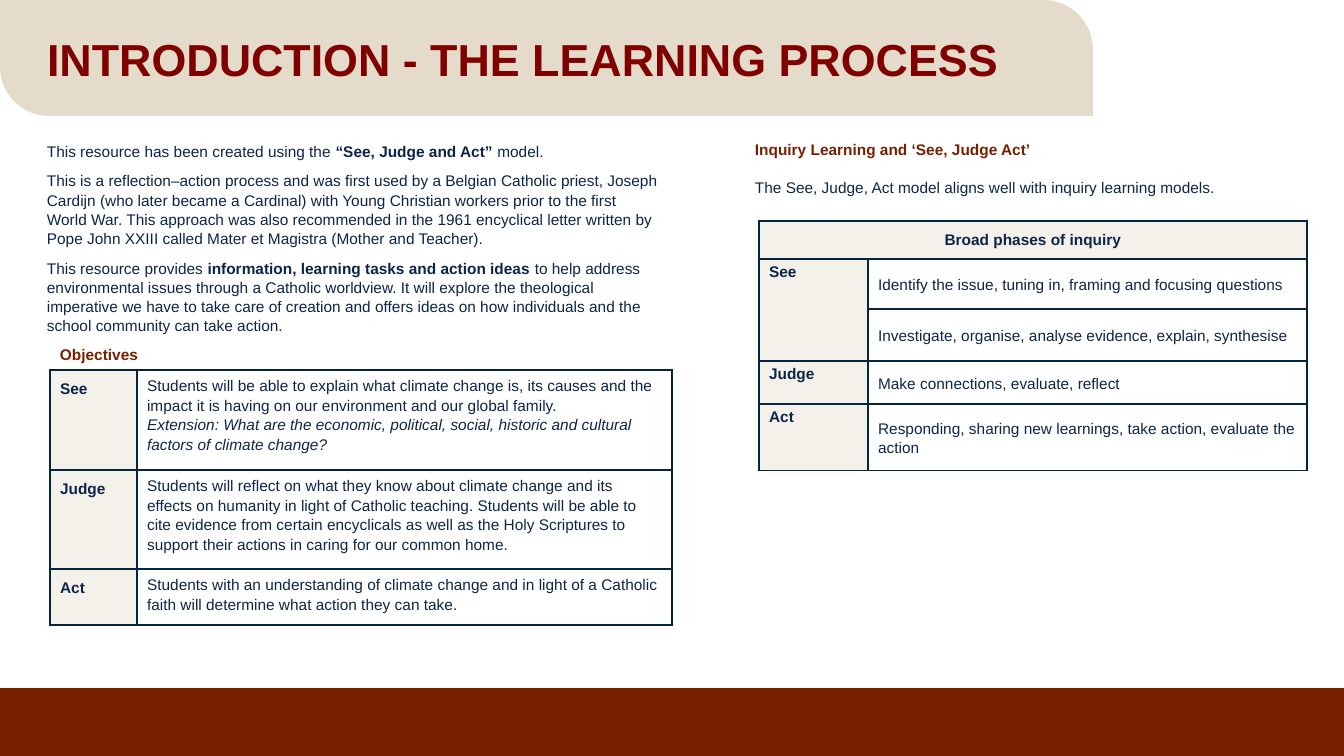
from lxml import etree
from pptx import Presentation
from pptx import util as u
from pptx.dml.color import RGBColor
from pptx.enum import shapes, text
from pptx.oxml.ns import qn

PX = 914400 / 100.8
WHITE = RGBColor(0xFF, 0xFF, 0xFF)
SAND = RGBColor(0xE5, 0xDB, 0xCB)
RUST = RGBColor(0x76, 0x20, 0x00)
MAROON = RGBColor(0x80, 0x00, 0x00)
NAVY = RGBColor(0x0C, 0x24, 0x4C)
INK = RGBColor(0x0D, 0x25, 0x4A)
BORDER = RGBColor(0x05, 0x24, 0x3F)

INTRO = [
    [("This resource has been created using the ", False),
     ("“See, Judge and Act” ", True), ("model.", False)],
    [("This is a reflection–action process and was first used by a Belgian Catholic priest, "
      "Joseph Cardijn (who later became a Cardinal) with Young Christian workers prior to the "
      "first World War. This approach was also recommended in the 1961 encyclical letter written "
      "by Pope John XXIII called Mater et Magistra (Mother and Teacher).", False)],
    [("This resource provides ", False),
     ("information, learning tasks and action ideas ", True),
     ("to help address environmental issues through a Catholic worldview. It will explore the "
      "theological imperative we have to take care of creation and offers ideas on how individuals "
      "and the school community can take action.", False)],
]
OBJECTIVES = [
    ("See", ["Students will be able to explain what climate change is, its causes and the impact "
             "it is having on our environment and our global family.",
             "Extension: What are the economic, political, social, historic and cultural factors "
             "of climate change?"]),
    ("Judge", ["Students will reflect on what they know about climate change and its effects on "
               "humanity in light of Catholic teaching. Students will be able to cite evidence from "
               "certain encyclicals as well as the Holy Scriptures to support their actions in "
               "caring for our common home."]),
    ("Act", ["Students with an understanding of climate change and in light of a Catholic faith "
             "will determine what action they can take."]),
]
PHASES = [
    ("See", "Identify the issue, tuning in, framing and focusing questions"),
    ("", "Investigate, organise, analyse evidence, explain, synthesise"),
    ("Judge", "Make connections, evaluate, reflect"),
    ("Act", "Responding, sharing new learnings, take action, evaluate the action"),
]


def px(*lengths):
    return [u.Emu(round(length * PX)) for length in lengths]


def style(paragraph, color, bold=None, size=11, spacing=None):
    font = paragraph.font
    font.name, font.size, font.bold = "Arial", u.Pt(size), bold
    font.color.rgb = color
    if spacing:
        paragraph.line_spacing = spacing


def add_band(slide, preset, box, color):
    band = slide.shapes.add_shape(preset, *px(*box))
    band.shadow.inherit = False
    band.fill.solid()
    band.fill.fore_color.rgb = color
    band.line.fill.background()
    return band


def add_copy(slide, box):
    frame = slide.shapes.add_textbox(*px(*box)).text_frame
    frame.word_wrap = True
    return frame


def draw_border(cell):
    properties = cell._tc.get_or_add_tcPr()
    for side in ("lnL", "lnR", "lnT", "lnB"):
        line = etree.SubElement(properties, qn(f"a:{side}"), w=str(u.Pt(1)))
        fill = etree.SubElement(line, qn("a:solidFill"))
        etree.SubElement(fill, qn("a:srgbClr"), val=str(BORDER))


def tint(cell):
    cell.fill.solid()
    cell.fill.fore_color.rgb = SAND
    color = cell._tc.tcPr.find(qn("a:solidFill")).find(qn("a:srgbClr"))
    etree.SubElement(color, qn("a:alpha"), val="40000")


def add_grid(slide, left, top, columns, rows):
    table = slide.shapes.add_table(len(rows), len(columns),
                                   *px(left, top, sum(columns), sum(rows))).table
    table.first_row = table.horz_banding = False
    for column, width in zip(table.columns, px(*columns)):
        column.width = width
    for row, height in zip(table.rows, px(*rows)):
        row.height = height
    for cell in table.iter_cells():
        draw_border(cell)
        cell.fill.background()
    return table


def fill_label(cell, label, spacing=None):
    cell.text = label
    style(cell.text_frame.paragraphs[0], INK, True, spacing=spacing)
    tint(cell)


def add_header(slide, left, top, width, height):
    banner = add_band(slide, shapes.MSO_SHAPE.ROUND_2_DIAG_RECTANGLE,
                      (left, top, width, height), SAND)
    banner.adjustments[0], banner.adjustments[1] = 0, 0.425
    title = slide.shapes.title
    title.element.getparent().append(title.element)
    title.left, title.top, title.width, title.height = px(left + 37, top + 18, width - 62, 88)
    frame = title.text_frame
    frame.text = "INTRODUCTION - THE LEARNING PROCESS"
    frame.auto_size = text.MSO_AUTO_SIZE.NONE
    frame.vertical_anchor = text.MSO_ANCHOR.MIDDLE
    heading = frame.paragraphs[0]
    heading.alignment = text.PP_ALIGN.LEFT
    style(heading, MAROON, True, 32, 0.9)


def add_intro(slide, left, top, width, height):
    frame = add_copy(slide, (left, top, width, height))
    for index, runs in enumerate(INTRO):
        paragraph = frame.paragraphs[0] if index == 0 else frame.add_paragraph()
        style(paragraph, NAVY, spacing=1.04)
        if index:
            paragraph.space_before = u.Pt(7.5)
        for words, bold in runs:
            run = paragraph.add_run()
            run.text, run.font.bold = words, bold


def add_objectives(slide, left, top, width):
    heading = add_copy(slide, (left, top, width, 29)).paragraphs[0]
    heading.text = "Objectives"
    style(heading, RUST, True)
    grid = add_grid(slide, left, top + 30, (87, width - 87), (100, 99, 56))
    for row, (label, aims) in enumerate(OBJECTIVES):
        fill_label(grid.cell(row, 0), label, u.Pt(16))
        aim_cell = grid.cell(row, 1)
        aim_cell.text = "\n".join(aims)
        for index, paragraph in enumerate(aim_cell.text_frame.paragraphs):
            style(paragraph, INK, False, spacing=1.15)
            paragraph.font.italic = index > 0


def add_inquiry(slide, left, top, width):
    frame = add_copy(slide, (left, top, width, 85))
    frame.text = ("Inquiry Learning and ‘See, Judge Act’\n"
                  "The See, Judge, Act model aligns well with inquiry learning models.")
    heading, summary = frame.paragraphs
    style(heading, RUST, True)
    style(summary, INK, False)
    summary.space_before = u.Pt(13.8)

    grid = add_grid(slide, left + 14, top + 86, (109, width - 109), (38, 50, 52, 43, 67))
    grid.cell(0, 0).merge(grid.cell(0, 1))
    grid.cell(1, 0).merge(grid.cell(2, 0))
    fill_label(grid.cell(0, 0), "Broad phases of inquiry")
    grid.cell(0, 0).vertical_anchor = text.MSO_ANCHOR.MIDDLE
    grid.cell(0, 0).text_frame.paragraphs[0].alignment = text.PP_ALIGN.CENTER
    for row, (label, phase) in enumerate(PHASES, 1):
        if label:
            fill_label(grid.cell(row, 0), label)
        phase_cell = grid.cell(row, 1)
        phase_cell.text = phase
        phase_cell.vertical_anchor = text.MSO_ANCHOR.MIDDLE
        style(phase_cell.text_frame.paragraphs[0], INK, False, spacing=1.15)


def main():
    deck = Presentation()
    deck.slide_width, deck.slide_height = px(1344, 756)
    slide = deck.slides.add_slide(deck.slide_layouts[5])
    slide.background.fill.solid()
    slide.background.fill.fore_color.rgb = WHITE
    add_band(slide, shapes.MSO_SHAPE.RECTANGLE, (0, 688, 1344, 68), RUST)
    add_header(slide, 0, 0, 1093, 116)
    add_intro(slide, 37, 136, 634, 520)
    add_inquiry(slide, 745, 135, 548)
    add_objectives(slide, 50, 340, 622)
    deck.save("out.pptx")


if __name__ == "__main__":
    main()
